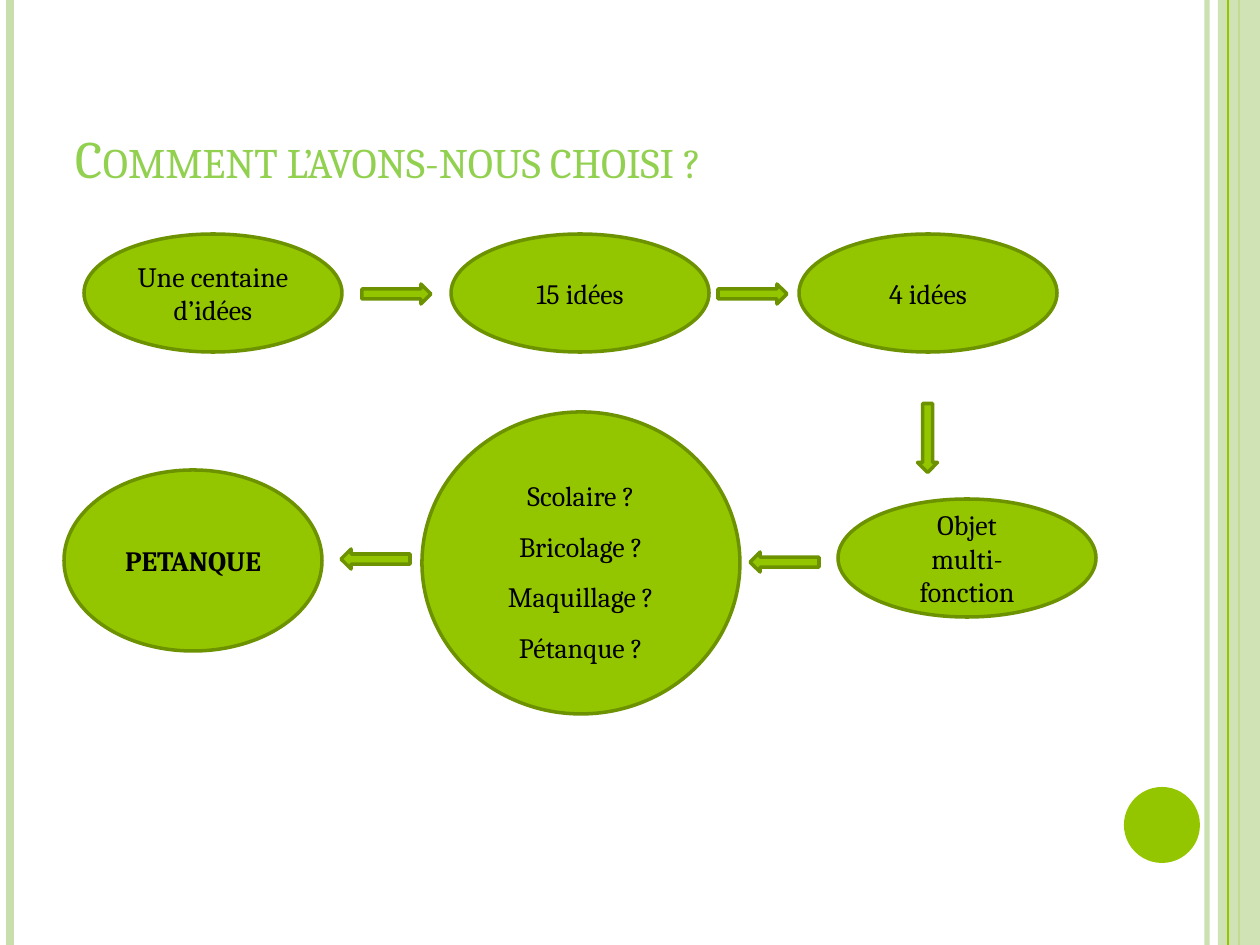
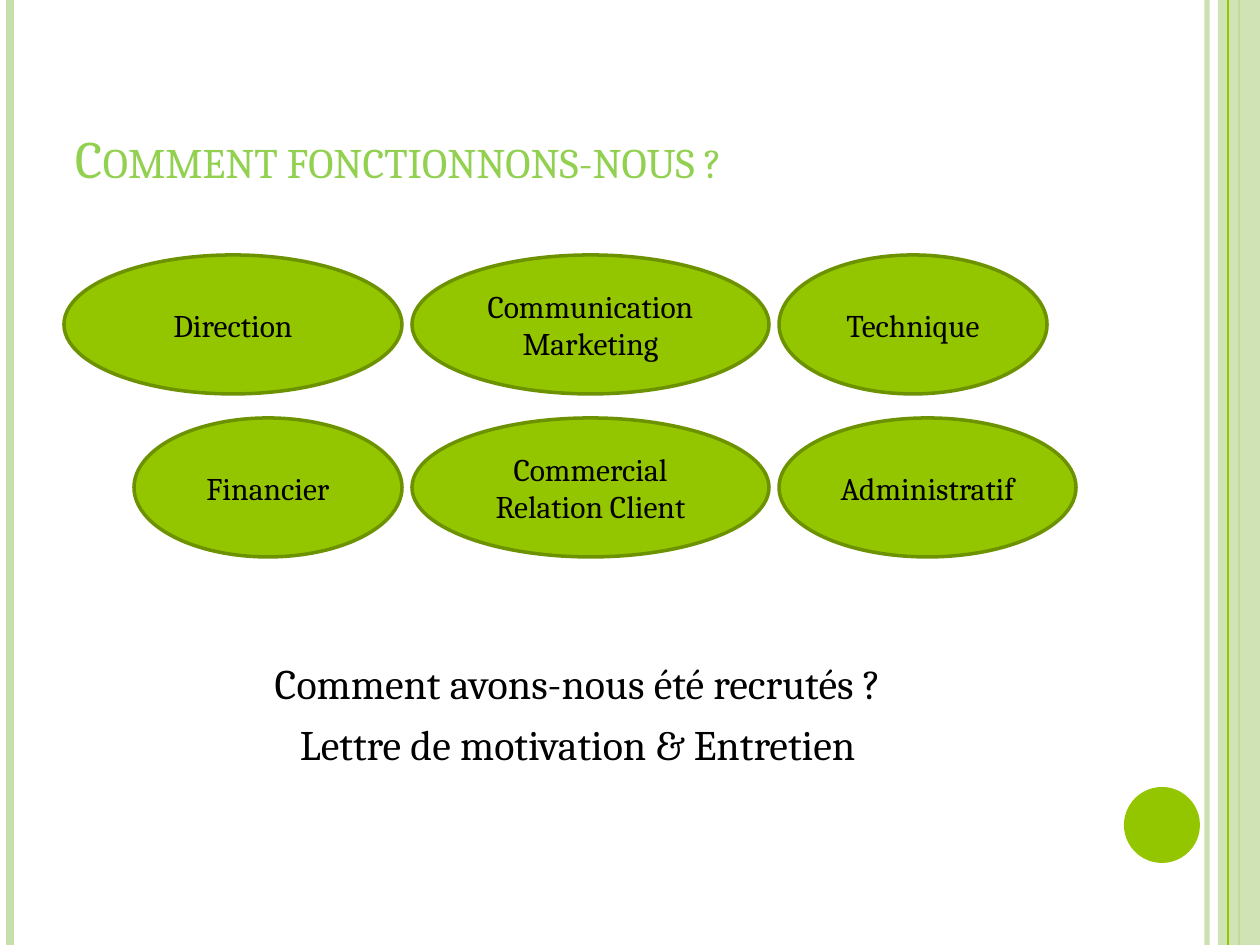
from lxml import etree
from pptx import Presentation
from pptx.dml.color import RGBColor
from pptx.enum.shapes import MSO_CONNECTOR, MSO_SHAPE
from pptx.enum.text import MSO_ANCHOR, MSO_AUTO_SIZE, PP_ALIGN
from pptx.oxml.ns import qn
from pptx.util import Emu, Pt

OVAL, ARROW, BAND = MSO_SHAPE.OVAL, MSO_SHAPE.RIGHT_ARROW, MSO_SHAPE.RECTANGLE
STRAIGHT = MSO_CONNECTOR.STRAIGHT
LEFT, CENTER = PP_ALIGN.LEFT, PP_ALIGN.CENTER

PX_PER_INCH = 126
SLIDE_WIDTH, SLIDE_HEIGHT = 1260, 945
FONT = "Cambria"
COLORS = {
    "background": "FFFFFF",
    "title": "92D050",
    "text": "000000",
    "green": "94C600",
    "outline": "6D9200",
    "pale": "C8DFAB",
}


def px(length):
    return Emu(round(length * 914400 / PX_PER_INCH))


def color(name):
    return RGBColor.from_string(COLORS[name])


def set_opacity(fill_parent, percent):
    """Make the solid colour inside an spPr or a:ln element translucent."""
    value = fill_parent.find(qn("a:solidFill"))[0]
    etree.SubElement(value, qn("a:alpha")).set("val", str(percent * 1000))


def write(frame, lines, size, color_name="text", align=CENTER, bold=False):
    frame.word_wrap = True
    frame.text = "\n".join(lines)
    for para in frame.paragraphs:
        para.alignment = align
        for span in para.runs:
            span.font.name = FONT
            span.font.size = Pt(size)
            span.font.bold = bold
            span.font.color.rgb = color(color_name)


def add_figure(page, kind, left, top, width, height, fill="green", outline=None):
    figure = page.shapes.add_shape(kind, px(left), px(top), px(width), px(height))
    figure.shadow.inherit = False
    figure.fill.solid()
    figure.fill.fore_color.rgb = color(fill)
    if outline:
        figure.line.color.rgb = color(outline)
        figure.line.width = Pt(2)
    else:
        figure.line.fill.background()
    return figure


def add_bubble(page, left, top, width, height, lines, size, bold=False):
    bubble = add_figure(page, OVAL, left, top, width, height, outline="outline")
    bubble.text_frame.vertical_anchor = MSO_ANCHOR.MIDDLE
    write(bubble.text_frame, lines, size, bold=bold)
    return bubble


def add_arrow(page, left, top, rotation):
    arrow = add_figure(page, ARROW, left, top, 69, 20, outline="outline")
    arrow.rotation = rotation


def add_stripe(page, x, color_name, width):
    """Draw a vertical line over the full slide height."""
    stripe = page.shapes.add_connector(STRAIGHT, px(x), 0, px(x), px(SLIDE_HEIGHT))
    stripe.line.color.rgb = color(color_name)
    stripe.line.width = Pt(width)
    etree.SubElement(stripe._element.spPr, qn("a:effectLst"))
    return stripe


def add_decor(page):
    stripe = add_stripe(page, 1207, "pale", 3)
    set_opacity(stripe._element.spPr.find(qn("a:ln")), 93)
    add_stripe(page, 10, "pale", 4.5)
    add_stripe(page, 1239, "green", 1.5)
    band = add_figure(page, BAND, 1218, 0, 42, SLIDE_HEIGHT, "pale")
    set_opacity(band._element.spPr, 87)
    add_stripe(page, 1228, "green", 0.75)
    add_figure(page, OVAL, 1124, 787, 76, 76)


def add_page(deck, heading):
    page = deck.slides.add_slide(deck.slide_layouts[5])
    page.background.fill.solid()
    page.background.fill.fore_color.rgb = color("background")
    add_decor(page)
    title = page.shapes.title
    title.left, title.top = px(63), px(38)
    title.width, title.height = px(1029), px(157)
    frame = title.text_frame
    frame.auto_size = MSO_AUTO_SIZE.NONE
    frame.vertical_anchor = MSO_ANCHOR.BOTTOM
    write(frame, [heading], 30, "title", LEFT)
    for span in frame.paragraphs[0].runs:
        span.font._element.set("cap", "small")
    return page


def build_choice(deck):
    page = add_page(deck, "Comment l’avons-nous choisi ?")
    width, height, size = 258, 118, 16
    for left, label in ((84, "Une centaine d’idées"), (451, "15 idées"), (799, "4 idées")):
        add_bubble(page, left, 234, width, height, [label], size)
    add_bubble(page, 838, 499, width, height, ["Objet", "multi-fonction"], size)
    themes = ["Scolaire ?", "Bricolage ?", "Maquillage ?", "Pétanque ?"]
    candidates = add_bubble(page, 422, 412, 318, 302, themes, size)
    for para in candidates.text_frame.paragraphs:
        para.line_spacing = 1.5
    add_bubble(page, 64, 470, width, 181, ["PETANQUE"], size, bold=True)
    arrows = ((362, 284, 0), (718, 284, 0), (893, 428, 90), (750, 552, 180), (341, 549, 180))
    for left, top, rotation in arrows:
        add_arrow(page, left, top, rotation)


def build_organisation(deck):
    page = add_page(deck, "Comment fonctionnons-nous ?")
    gap = 10
    rows = (
        (64, 255, ((338, ["Direction"]), (357, ["Communication Marketing"]),
                   (268, ["Technique"]))),
        (134, 418, ((268, ["Financier"]), (357, ["Commercial", "Relation Client"]),
                    (297, ["Administratif"]))),
    )
    for left, top, departments in rows:
        for width, lines in departments:
            add_bubble(page, left, top, width, 139, lines, 18)
            left += width + gap
    box = page.shapes.add_textbox(px(63), px(651), px(1029), px(122))
    write(box.text_frame,
          ["Comment avons-nous été recrutés ?", "Lettre de motivation & Entretien"], 24)
    box.text_frame.paragraphs[1].space_before = Pt(6)


def main():
    deck = Presentation()
    deck.slide_width, deck.slide_height = px(SLIDE_WIDTH), px(SLIDE_HEIGHT)
    build_choice(deck)
    build_organisation(deck)
    deck.save("out.pptx")


if __name__ == "__main__":
    main()
